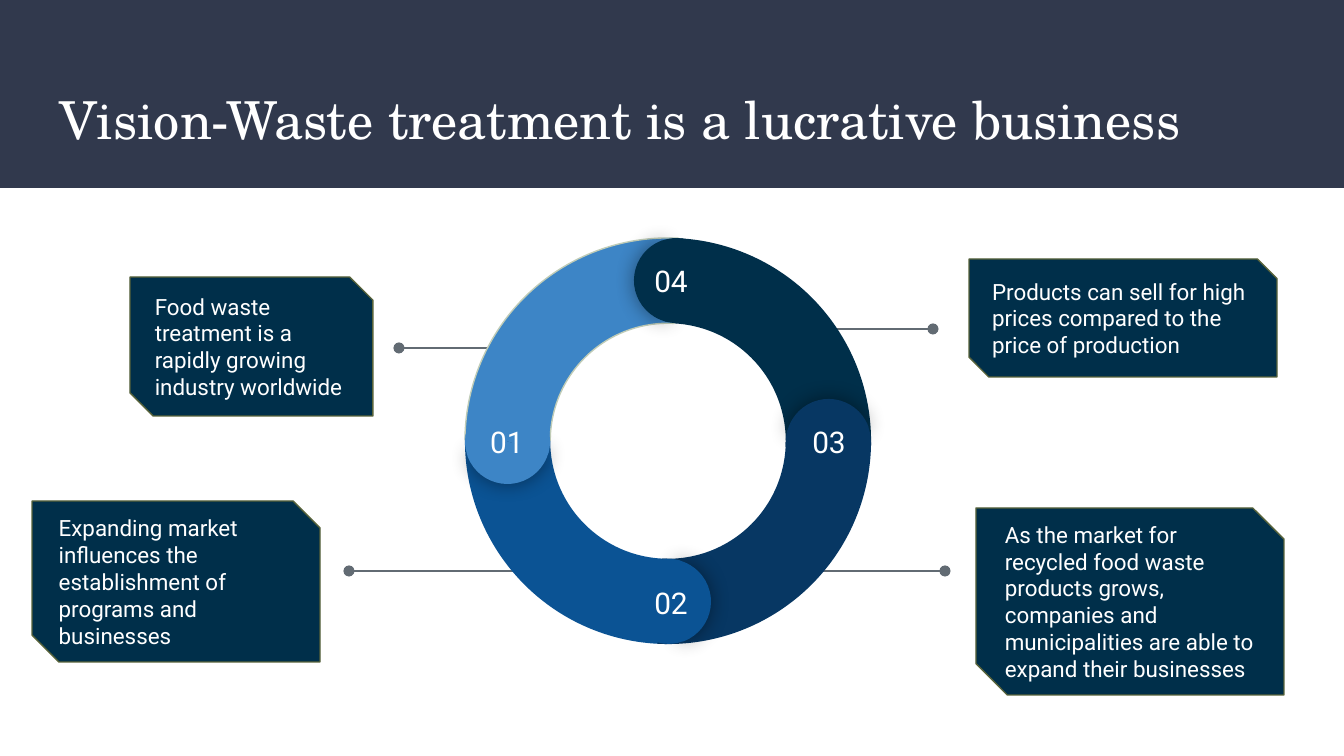
import dataclasses

import lxml.etree
import pptx
import pptx.dml.color
import pptx.enum.shapes
import pptx.enum.text
import pptx.oxml.ns
import pptx.util

SHAPES = pptx.enum.shapes.MSO_SHAPE
ANCHORS = pptx.enum.text.MSO_ANCHOR
ALIGNS = pptx.enum.text.PP_ALIGN
EMU_PER_PX = 914400 / 134.4
RING_BOX = (465, 238, 406, 406)
CAP_SIZE = 85
ARC_ANGLES = (210.37, 302.94)
ARC_THICKNESS = 0.21
SHADED_HALF = (103.17, 249.94)
PLAIN_HALF = (67.14, 286.4)


@dataclasses.dataclass(frozen=True)
class Theme:
    header: str = "31394D"
    card: str = "002F4A"
    card_line: str = "58633A"
    connector: str = "626B73"
    text: str = "FFFFFF"
    heading_font: str = "TeX Gyre Schola"
    body_font: str = "Roboto"
    title_size: int = 28
    number_size: int = 16
    card_size: int = 12


@dataclasses.dataclass(frozen=True)
class Segment:
    number: str
    color: str
    turn: int
    cap: tuple
    label: tuple
    outline: str = ""


THEME = Theme()

SEGMENTS = {
    "02": Segment("02", "0B5394", 180, (626, 559), (634, 571)),
    "04": Segment("04", "002F4A", 0, (634, 238), (634, 249)),
    "03": Segment("03", "073763", 90, (786, 399), (792, 410)),
    "01": Segment("01", "3D85C6", 270, (465, 399), (470, 410), "C0CCB7"),
}

CARDS = [
    ((976, 508, 308, 187), "As the market for recycled food waste products grows, "
     "companies and municipalities are able to expand their businesses"),
    ((32, 501, 288, 161), "Expanding market influences the establishment of "
     "programs and businesses"),
    ((969, 259, 308, 118), "Products can sell for high prices compared to the "
     "price of production"),
    ((130, 277, 243, 139), "Food waste treatment is a rapidly growing industry "
     "worldwide"),
]

# Start x, end x and height of each connector
CONNECTORS = [(542, 349, 571), (757, 945, 571), (743, 933, 329), (519, 399, 348)]


def px(length):
    return pptx.util.Emu(round(length * EMU_PER_PX))


def rgb(color):
    return pptx.dml.color.RGBColor.from_string(color)


def add_xml(parent, tag, **attributes):
    return lxml.etree.SubElement(parent, pptx.oxml.ns.qn(tag), attributes)


def add_shape(page, kind, box, fill, line="", rotation=0, adjustments=()):
    shape = page.shapes.add_shape(kind, *map(px, box))
    shape.shadow.inherit = False
    shape.fill.solid()
    shape.fill.fore_color.rgb = rgb(fill)
    if line:
        shape.line.color.rgb = rgb(line)
        shape.line.width = pptx.util.Pt(0.75)
    else:
        shape.line.fill.background()
    shape.rotation = rotation % 360
    for index, value in enumerate(adjustments):
        shape.adjustments[index] = value
    return shape


def write_text(shape, text, size, font, align=ALIGNS.LEFT, anchor=ANCHORS.TOP):
    frame = shape.text_frame
    frame.word_wrap = True
    frame.vertical_anchor = anchor
    frame.margin_left = frame.margin_right = pptx.util.Inches(0.1)
    frame.margin_top = frame.margin_bottom = pptx.util.Inches(0.1)
    para = frame.paragraphs[0]
    para.text = text
    para.alignment = align
    para.font.size = pptx.util.Pt(size)
    para.font.name = font
    para.font.color.rgb = rgb(THEME.text)


def add_text(page, box, *args, **kwargs):
    write_text(page.shapes.add_textbox(*map(px, box)), *args, **kwargs)


def add_connector(page, start, end, height):
    line = page.shapes.add_connector(
        pptx.enum.shapes.MSO_CONNECTOR.STRAIGHT,
        px(start), px(height), px(end), px(height))
    line.line.color.rgb = rgb(THEME.connector)
    line.line.width = pptx.util.Pt(1.5)
    add_xml(line.line._get_or_add_ln(), "a:tailEnd", type="oval")
    add_xml(line._element.spPr, "a:effectLst")


def add_card(page, box, text):
    card = add_shape(page, SHAPES.SNIP_2_DIAG_RECTANGLE, box, THEME.card,
                     THEME.card_line, adjustments=(0, 0.167))
    write_text(card, text, THEME.card_size, THEME.body_font, anchor=ANCHORS.MIDDLE)


def angles(degrees):
    # Angles are stored in 60000ths of a degree, adjustments in 100000ths
    return tuple(degree * 0.6 for degree in degrees)


def add_glow(shape):
    effects = shape._element.spPr.find(pptx.oxml.ns.qn("a:effectLst"))
    shadow = add_xml(effects, "a:outerShdw", blurRad=str(pptx.util.Pt(11.2)),
                     dist="0", dir="0", algn="ctr", rotWithShape="0")
    color = add_xml(shadow, "a:srgbClr", val="000000")
    add_xml(color, "a:alpha", val="43000")


def add_arc(page, segment):
    add_shape(page, SHAPES.BLOCK_ARC, RING_BOX, segment.color, segment.outline,
              segment.turn + 60, angles(ARC_ANGLES) + (ARC_THICKNESS,))


def add_cap(page, segment):
    box = (*segment.cap, CAP_SIZE, CAP_SIZE)
    shaded = add_shape(page, SHAPES.PIE, box, segment.color,
                       rotation=segment.turn + 0.7, adjustments=angles(SHADED_HALF))
    add_glow(shaded)
    add_shape(page, SHAPES.PIE, box, segment.color,
              rotation=segment.turn + 180, adjustments=angles(PLAIN_HALF))
    add_text(page, (*segment.label, 74, 39), segment.number, THEME.number_size,
             THEME.body_font, align=ALIGNS.CENTER)


def main():
    deck = pptx.Presentation()
    deck.slide_width, deck.slide_height = px(1344), px(756)
    page = deck.slides.add_slide(deck.slide_layouts[6])

    # Header band and title
    add_shape(page, SHAPES.RECTANGLE, (0, 0, 1344, 188), THEME.header)
    add_text(page, (46, 74, 1253, 91), "Vision-Waste treatment is a lucrative business",
             THEME.title_size, THEME.heading_font)

    # Cards and the lines that tie them to the ring
    for start, end, height in CONNECTORS:
        add_connector(page, start, end, height)
    for box, text in CARDS:
        add_card(page, box, text)

    # Ring: each cap overlaps the arc before it
    for number in ("02", "04", "03"):
        add_arc(page, SEGMENTS[number])
    for number in ("03", "02"):
        add_cap(page, SEGMENTS[number])
    add_arc(page, SEGMENTS["01"])
    for number in ("01", "04"):
        add_cap(page, SEGMENTS[number])

    deck.save("out.pptx")


if __name__ == "__main__":
    main()
